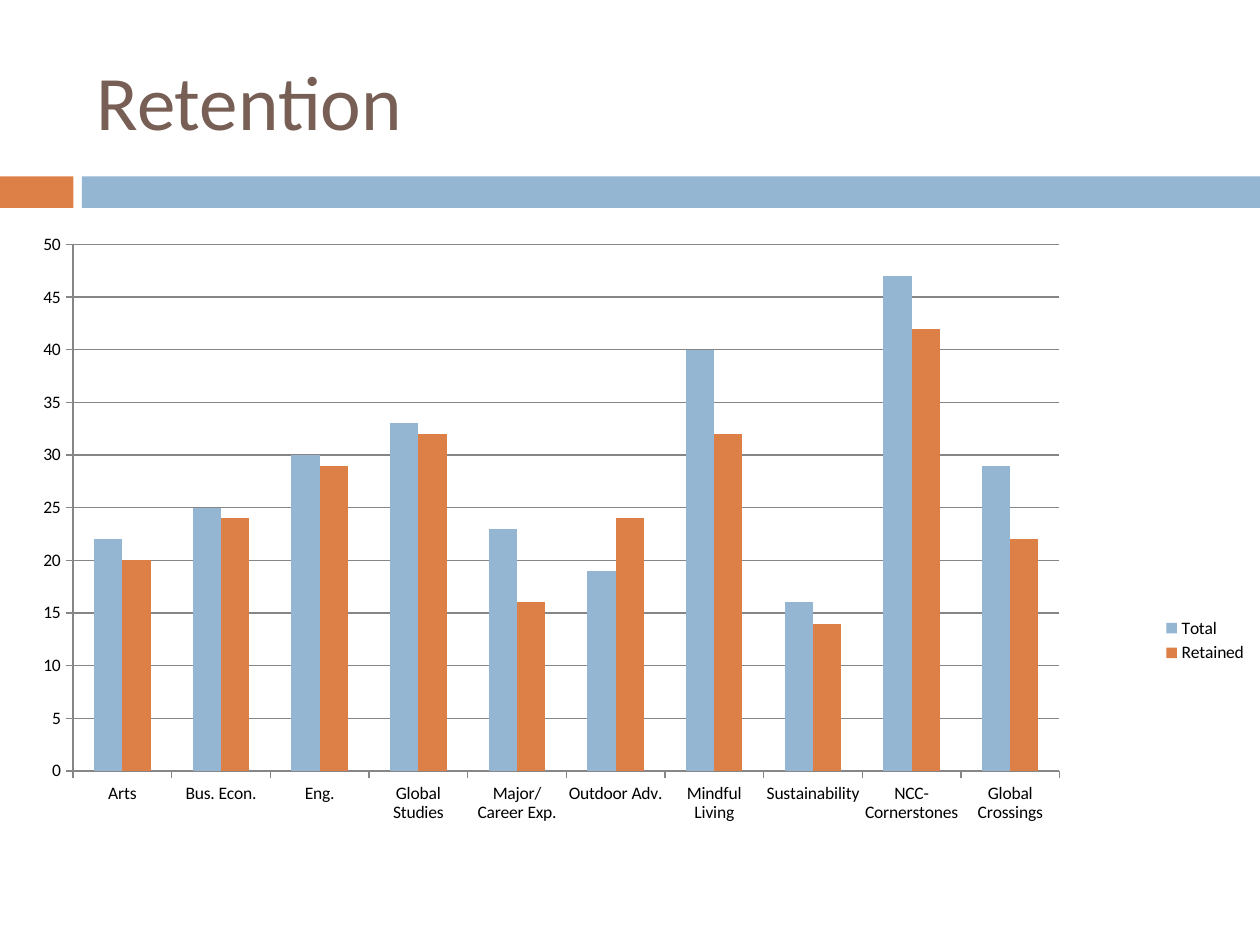
from lxml import etree
from pptx import Presentation
from pptx.chart.data import CategoryChartData
from pptx.dml.color import RGBColor
from pptx.enum import chart as ch, shapes, text
from pptx.oxml.ns import qn
from pptx.util import Pt

BLUE, ORANGE, BROWN, GREY = "94B6D2", "DD8047", "775F55", "868686"


def rgb(value):
    return RGBColor.from_string(value)


prs = Presentation()
prs.slide_width, prs.slide_height = Pt(720), Pt(540)
s = prs.slides.add_slide(prs.slide_layouts[5])

# Band under the title
for left, width, color in ((0, 42, ORANGE), (46.8, 673.2, BLUE)):
    sp = s.shapes.add_shape(shapes.MSO_SHAPE.RECTANGLE,
                            Pt(left), Pt(100.8), Pt(width), Pt(18))
    sp.shadow.inherit = False
    sp.fill.solid()
    sp.fill.fore_color.rgb = rgb(color)
    sp.line.fill.background()

# Title
title = s.shapes.title
title.left, title.top, title.width, title.height = Pt(48), Pt(18), Pt(642), Pt(78)
tf = title.text_frame
tf.text = "Retention"
tf.vertical_anchor = text.MSO_ANCHOR.MIDDLE
p = tf.paragraphs[0]
p.alignment = text.PP_ALIGN.LEFT
r = p.runs[0]
r.font.name, r.font.size = "Calibri", Pt(44)
r.font.color.rgb = rgb(BROWN)

# Retention chart
data = CategoryChartData()
data.categories = ["Arts", "Bus. Econ.", "Eng.", "Global Studies",
                   "Major/Career Exp.", "Outdoor Adv.", "Mindful Living",
                   "Sustainability", "NCC- Cornerstones", "Global Crossings"]
data.add_series("Total", (22, 25, 30, 33, 23, 19, 40, 16, 47, 29))
data.add_series("Retained", (20, 24, 29, 32, 16, 24, 32, 14, 42, 22))
chart = s.shapes.add_chart(ch.XL_CHART_TYPE.COLUMN_CLUSTERED,
                           Pt(0), Pt(114), Pt(720), Pt(504), data).chart
chart.has_title = False
chart.font.name, chart.font.size = "Calibri", Pt(10)
chart.font.color.rgb = rgb("000000")

plot = chart.plots[0]
plot.gap_width, plot.overlap, plot.vary_by_categories = 150, 0, False
for series, color in zip(plot.series, (BLUE, ORANGE)):
    series.format.fill.solid()
    series.format.fill.fore_color.rgb = rgb(color)

# Axes and gridlines
val_axis, cat_axis = chart.value_axis, chart.category_axis
val_axis.minimum_scale, val_axis.maximum_scale, val_axis.major_unit = 0, 50, 5
val_axis.has_major_gridlines = True
cat_axis.has_major_gridlines = False
for axis in (val_axis, cat_axis):
    axis.major_tick_mark = ch.XL_TICK_MARK.OUTSIDE
    axis.minor_tick_mark = ch.XL_TICK_MARK.NONE
for part in (val_axis, cat_axis, val_axis.major_gridlines):
    part.format.line.color.rgb = rgb(GREY)
    part.format.line.width = Pt(0.75)

# Legend
chart.has_legend = True
chart.legend.position = ch.XL_LEGEND_POSITION.RIGHT
chart.legend.include_in_layout = False

# Fixed inner plot area, as fractions of the chart
area = chart.element.find(".//" + qn("c:plotArea"))
for old in area.findall(qn("c:layout")):
    area.remove(old)
layout = etree.Element(qn("c:layout"))
area.insert(0, layout)
manual = etree.SubElement(layout, qn("c:manualLayout"))
for tag, val in (("layoutTarget", "inner"), ("xMode", "edge"), ("yMode", "edge"),
                 ("x", 0.058), ("y", 0.051), ("w", 0.783), ("h", 0.597)):
    etree.SubElement(manual, qn("c:" + tag)).set("val", str(val))

prs.save("out.pptx")
